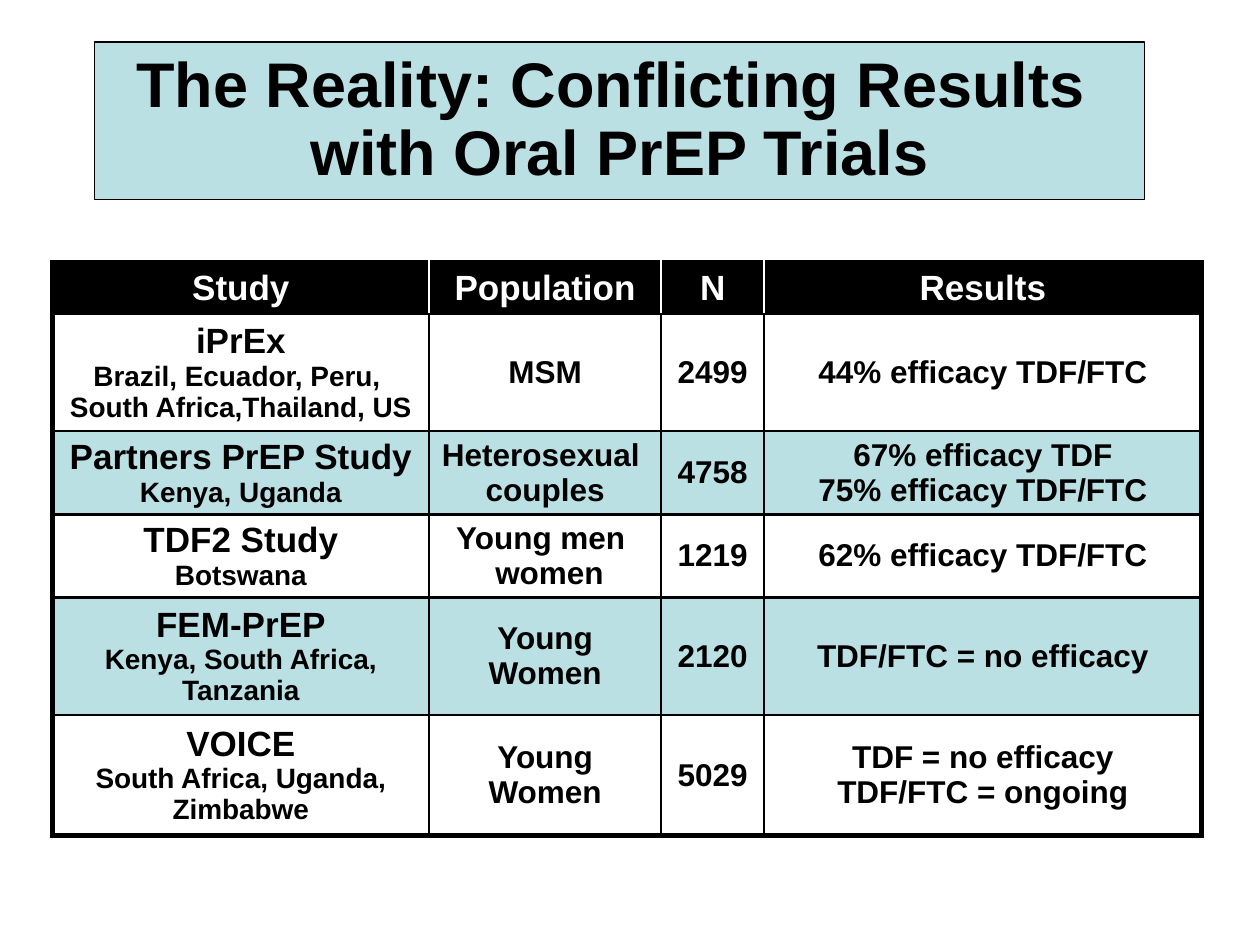
from dataclasses import dataclass

from lxml.etree import SubElement
from pptx import Presentation
from pptx.dml.color import RGBColor
from pptx.enum.shapes import MSO_SHAPE as Shape
from pptx.enum.text import MSO_ANCHOR as Anchor, PP_ALIGN as Align
from pptx.oxml.ns import qn
from pptx.util import Pt


@dataclass(frozen=True)
class Theme:
    font: str = "Arial"
    ink: str = "000000"
    paper: str = "FFFFFF"
    tint: str = "BBE0E3"
    title: int = 36
    heading: int = 20
    body: int = 18
    place: int = 16
    outline: float = 0.75
    grid: float = 1.5
    frame: float = 3


HEADINGS = ["Study", "Population", "N", "Results"]
# Each cell is a list of paragraphs; "\n" is a line break inside one.
TRIALS = [
    [["iPrEx\nBrazil, Ecuador, Peru, ", "South Africa,Thailand, US"],
     ["MSM"], ["2499"], ["44% efficacy TDF/FTC"]],
    [["Partners PrEP Study\nKenya, Uganda"],
     ["Heterosexual \ncouples"], ["4758"], ["67% efficacy TDF\n75% efficacy TDF/FTC"]],
    [["TDF2 Study\nBotswana"],
     ["Young men \n women"], ["1219"], ["62% efficacy TDF/FTC"]],
    [["FEM-PrEP\nKenya, South Africa, Tanzania"],
     ["Young Women"], ["2120"], ["TDF/FTC = no efficacy"]],
    [["VOICE\nSouth Africa, Uganda, Zimbabwe"],
     ["Young", "Women"], ["5029"], ["TDF = no efficacy\nTDF/FTC = ongoing"]],
]
COLUMN_WIDTHS = [215.3, 132.5, 59, 249.8]
ROW_HEIGHTS = [29.5, 67, 47.5, 47.5, 67, 69.1]


def apply(target, values):
    for attribute, value in values.items():
        setattr(target, attribute, value)


class SlideBuilder:
    def __init__(self, slide, theme):
        self.slide = slide
        self.theme = theme

    def text(self, frame, paragraphs, sizes, color, spacing=None):
        """Set centred bold text; sizes go to lines in turn, the last one repeating."""
        sizes = list(sizes)
        for index, content in enumerate(paragraphs):
            paragraph = frame.paragraphs[0] if index == 0 else frame.add_paragraph()
            apply(paragraph, {"alignment": Align.CENTER, "line_spacing": spacing})
            for number, line in enumerate(content.split("\n")):
                if number:
                    paragraph.add_line_break()
                run = paragraph.add_run()
                run.text = line
                size = sizes.pop(0) if len(sizes) > 1 else sizes[0]
                apply(run.font, {"name": self.theme.font, "size": Pt(size), "bold": True})
                run.font.color.rgb = RGBColor.from_string(color)

    def title(self, wording, left, top, width, height):
        theme = self.theme
        banner = self.slide.shapes.add_shape(
            Shape.RECTANGLE, Pt(left), Pt(top), Pt(width), Pt(height))
        banner.shadow.inherit = False
        banner.fill.solid()
        banner.fill.fore_color.rgb = RGBColor.from_string(theme.tint)
        banner.line.color.rgb = RGBColor.from_string(theme.ink)
        banner.line.width = Pt(theme.outline)
        apply(banner.text_frame, {"word_wrap": True, "vertical_anchor": Anchor.MIDDLE})
        self.text(banner.text_frame, [wording], [theme.title], theme.ink, 0.9)

    def borders(self, cell, edges):
        properties = cell._tc.get_or_add_tcPr()
        for side, (color, width) in edges.items():
            line = SubElement(properties, qn(f"a:ln{side}"), w=str(Pt(width)))
            fill = SubElement(line, qn("a:solidFill"))
            SubElement(fill, qn("a:srgbClr"), val=color)

    def table(self, headings, trials, left, top, widths, heights):
        theme = self.theme
        rows = [[[heading] for heading in headings], *trials]
        table = self.slide.shapes.add_table(
            len(rows), len(widths), Pt(left), Pt(top),
            Pt(sum(widths)), Pt(sum(heights))).table
        apply(table, {"first_row": False, "horz_banding": False})
        for column, width in zip(table.columns, widths):
            column.width = Pt(width)
        for row, height in zip(table.rows, heights):
            row.height = Pt(height)

        last_row, last_column = len(rows) - 1, len(widths) - 1
        for r, row in enumerate(rows):
            for c, paragraphs in enumerate(row):
                cell = table.cell(r, c)
                apply(cell, {
                    "vertical_anchor": Anchor.MIDDLE,
                    "margin_left": Pt(7.2), "margin_right": Pt(7.2),
                    "margin_top": Pt(2.2), "margin_bottom": Pt(2.2)})
                outer = (theme.ink, theme.frame)
                across = (theme.ink, theme.grid)
                down = (theme.paper if r == 0 else theme.ink, theme.grid)
                self.borders(cell, {
                    "L": outer if c == 0 else down,
                    "R": outer if c == last_column else down,
                    "T": outer if r == 0 else across,
                    "B": outer if r == last_row else across})
                if r == 0:
                    fill, color, sizes = theme.ink, theme.paper, [theme.heading]
                else:
                    fill = theme.tint if r % 2 == 0 else None
                    color = theme.ink
                    sizes = [theme.heading, theme.place] if c == 0 else [theme.body]
                if fill:
                    cell.fill.solid()
                    cell.fill.fore_color.rgb = RGBColor.from_string(fill)
                else:
                    cell.fill.background()
                self.text(cell.text_frame, paragraphs, sizes, color)


def main():
    deck = Presentation()
    apply(deck, {"slide_width": Pt(720), "slide_height": Pt(540)})
    builder = SlideBuilder(deck.slides.add_slide(deck.slide_layouts[6]), Theme())
    builder.title("The Reality: Conflicting Results \nwith Oral PrEP Trials", 54, 24, 600, 90)
    builder.table(HEADINGS, TRIALS, 30, 150, COLUMN_WIDTHS, ROW_HEIGHTS)
    deck.save("out.pptx")


if __name__ == "__main__":
    main()
